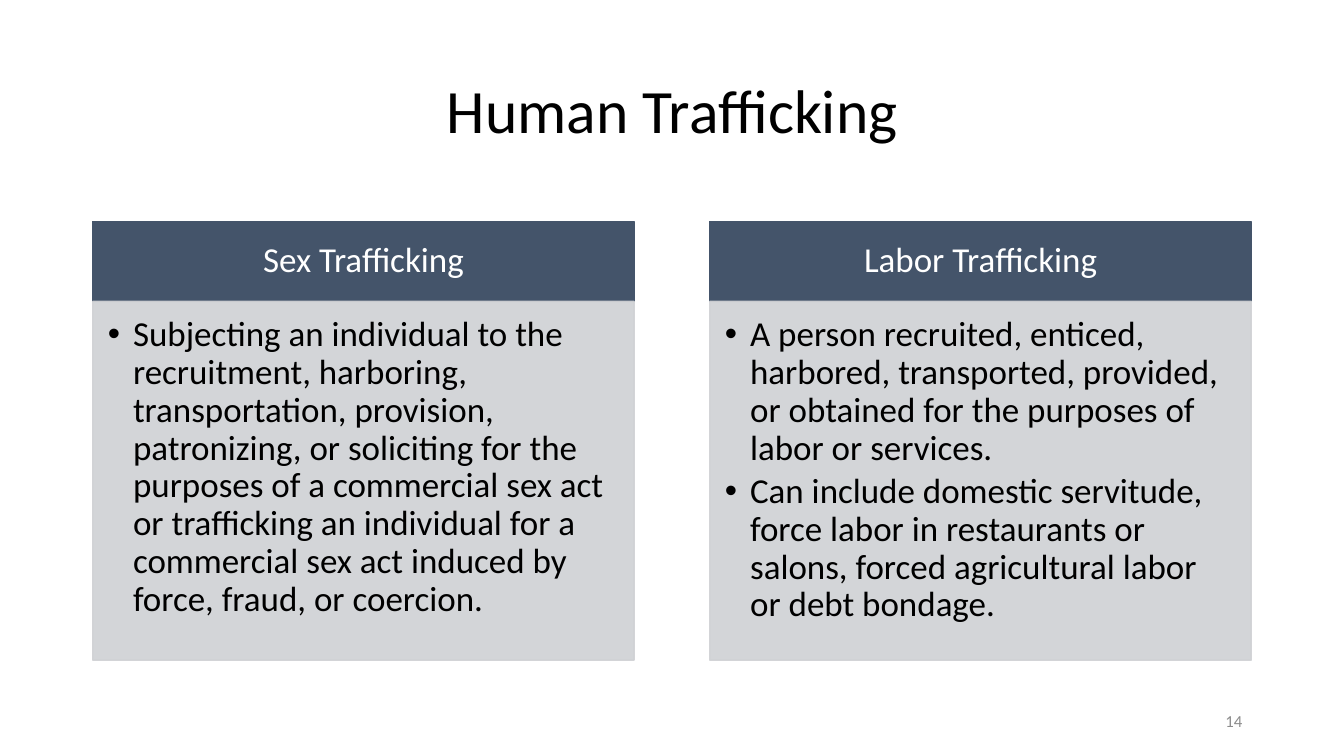
from dataclasses import dataclass

from pptx import Presentation
from pptx.dml.color import RGBColor
from pptx.enum.shapes import MSO_SHAPE as Shape
from pptx.enum.text import MSO_ANCHOR as Anchor, PP_ALIGN as Align
from pptx.oxml.ns import qn
from pptx.util import Inches, Pt
from lxml.etree import SubElement

FONT = "Calibri"
NAVY, GRAY, BLACK, WHITE, MUTED = "44546A", "CFD1D4", "000000", "FFFFFF", "8C8C8C"
LEFT, COL_W, COL_STEP = 0.92, 5.37, 6.12
HEAD_TOP, HEAD_H, BODY_H = 2.2, 0.79, 3.56


@dataclass
class Column:
    heading: str
    points: list[str]


COLUMNS = [
    Column("Sex Trafficking", [
        "Subjecting an individual to the recruitment, harboring, transportation, "
        "provision, patronizing, or soliciting for the purposes of a commercial sex act "
        "or trafficking an individual for a commercial sex act induced by force, fraud, "
        "or coercion.",
    ]),
    Column("Labor Trafficking", [
        "A person recruited, enticed, harbored, transported, provided, or obtained for "
        "the purposes of labor or services.",
        "Can include domestic servitude, force labor in restaurants or salons, forced "
        "agricultural labor or debt bondage.",
    ]),
]


def rgb(color: str) -> RGBColor:
    return RGBColor.from_string(color)


def set_frame(tf, anchor: Anchor, insets: tuple = (0.1, 0.05, 0.1, 0.05)) -> None:
    tf.word_wrap = True
    tf.vertical_anchor = anchor
    tf.margin_left, tf.margin_top, tf.margin_right, tf.margin_bottom = map(Inches, insets)


def write(p, text: str, size: float, color: str, align: Align,
          spacing: float = 0.9, after: float = 0) -> None:
    p.alignment, p.line_spacing, p.space_after = align, spacing, Pt(after)
    r = p.add_run()
    r.text = text
    r.font.size, r.font.name = Pt(size), FONT
    r.font.color.rgb = rgb(color)


def add_bullet(p) -> None:
    pPr = p._p.get_or_add_pPr()
    pPr.set("marL", str(Inches(0.25)))
    pPr.set("indent", str(-Inches(0.25)))
    SubElement(pPr, qn("a:buFont"), typeface="Arial")
    SubElement(pPr, qn("a:buChar"), char="•")


def add_label(s, box: tuple, text: str, size: float, color: str, align: Align,
              spacing: float) -> None:
    tf = s.shapes.add_textbox(*map(Inches, box)).text_frame
    set_frame(tf, Anchor.MIDDLE)
    write(tf.paragraphs[0], text, size, color, align, spacing)


def add_panel(s, box: tuple, color: str, opacity: int = 100):
    sp = s.shapes.add_shape(Shape.RECTANGLE, *map(Inches, box))
    sp.shadow.inherit = False
    sp.fill.solid()
    sp.fill.fore_color.rgb = sp.line.color.rgb = rgb(color)
    sp.line.width = Pt(1)
    if opacity < 100:
        for clr in sp._element.spPr.iter(qn("a:srgbClr")):
            SubElement(clr, qn("a:alpha"), val=str(opacity * 1000))
    return sp.text_frame


def add_column(s, left: float, column: Column) -> None:
    # Heading bar
    tf = add_panel(s, (left, HEAD_TOP, COL_W, HEAD_H), NAVY)
    set_frame(tf, Anchor.MIDDLE, (0.19, 0.11, 0.19, 0.11))
    write(tf.paragraphs[0], column.heading, 25, WHITE, Align.CENTER)

    # Bulleted body
    tf = add_panel(s, (left, HEAD_TOP + HEAD_H, COL_W, BODY_H), GRAY, opacity=90)
    set_frame(tf, Anchor.TOP, (0.15, 0.15, 0.19, 0.22))
    for i, point in enumerate(column.points):
        p = tf.add_paragraph() if i else tf.paragraphs[0]
        write(p, point, 25, BLACK, Align.LEFT, after=4)
        add_bullet(p)


def main() -> None:
    prs = Presentation()
    prs.slide_width, prs.slide_height = Inches(13.33), Inches(7.5)
    s = prs.slides.add_slide(prs.slide_layouts[6])

    # Title and page number
    add_label(s, (LEFT, 0.4, 11.5, 1.45), "Human Trafficking", 44, BLACK, Align.CENTER, 0.9)
    add_label(s, (9.42, 6.95, 3, 0.4), "14", 12, MUTED, Align.RIGHT, 1.0)

    # Two columns
    for i, column in enumerate(COLUMNS):
        add_column(s, LEFT + i * COL_STEP, column)

    prs.save("out.pptx")


if __name__ == "__main__":
    main()
